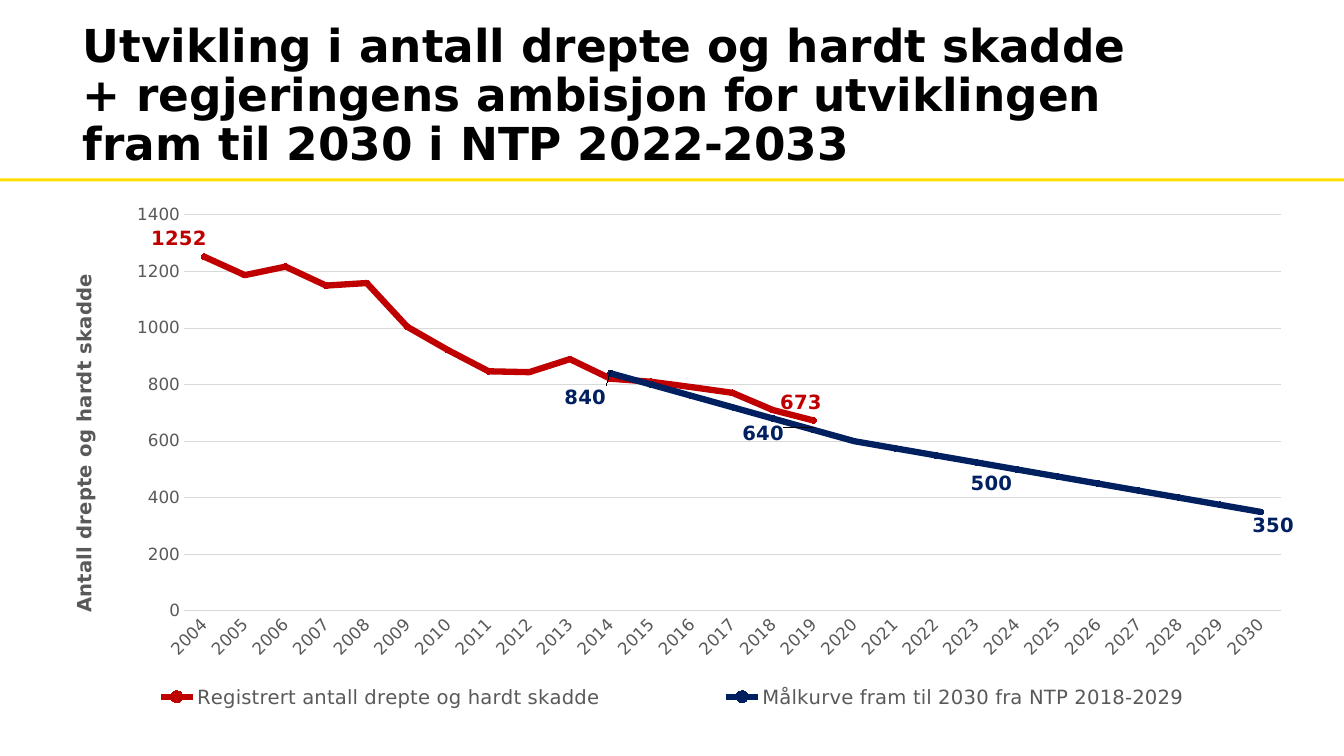
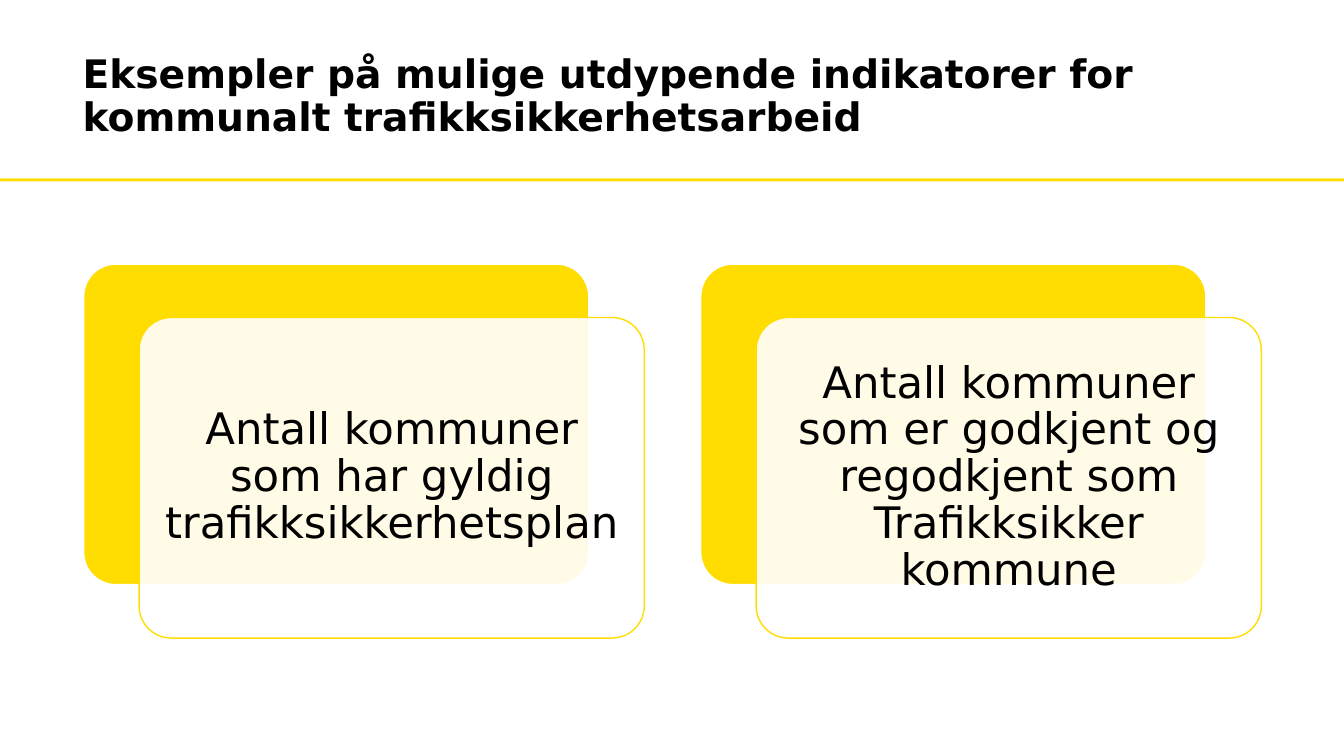
from dataclasses import dataclass

from lxml import etree
from pptx import Presentation
from pptx.chart.data import CategoryChartData
from pptx.dml.color import RGBColor
from pptx.enum.chart import (XL_CHART_TYPE, XL_LABEL_POSITION, XL_LEGEND_POSITION,
                             XL_MARKER_STYLE, XL_TICK_MARK)
from pptx.enum.shapes import MSO_SHAPE
from pptx.enum.text import MSO_ANCHOR, MSO_AUTO_SIZE, PP_ALIGN
from pptx.oxml.ns import qn
from pptx.util import Emu, Pt

LINE_CHART = XL_CHART_TYPE.LINE_MARKERS
LABEL_ABOVE = XL_LABEL_POSITION.ABOVE
LEGEND_BOTTOM = XL_LEGEND_POSITION.BOTTOM
CIRCLE = XL_MARKER_STYLE.CIRCLE
NO_TICK = XL_TICK_MARK.NONE
RECTANGLE = MSO_SHAPE.RECTANGLE
ROUNDED = MSO_SHAPE.ROUNDED_RECTANGLE
MIDDLE = MSO_ANCHOR.MIDDLE
NO_AUTOFIT = MSO_AUTO_SIZE.NONE
LEFT, CENTER = PP_ALIGN.LEFT, PP_ALIGN.CENTER

SLIDE_WIDTH, SLIDE_HEIGHT = 1333, 750
TITLE_LAYOUT = 5


@dataclass(frozen=True)
class Theme:
    font: str = "DejaVu Sans"
    black: str = "000000"
    white: str = "FFFFFF"
    yellow: str = "FFDD00"
    gray: str = "595959"
    grid: str = "D9D9D9"
    red: str = "C00000"
    navy: str = "002060"
    title_size: float = 28
    long_title_size: float = 32.4
    card_size: float = 31
    axis_size: float = 12
    label_size: float = 14
    line_spacing: float = 0.9


THEME = Theme()


def px(length):
    """One hundred px make an inch."""
    return Emu(length * 9144)


def rgb(color):
    return RGBColor.from_string(color)


def style_font(font, size, color, bold=False):
    font.name, font.size, font.bold = THEME.font, Pt(size), bold
    font.color.rgb = rgb(color)


def style_line(line, color, width):
    line.color.rgb = rgb(color)
    line.width = Pt(width)


def first(element, tag):
    return next(element.iter(qn(tag)))


def place(element, index, **values):
    """Give a chart part a manual layout, as fractions of the chart."""
    for old_layout in element.findall(qn("c:layout")):
        element.remove(old_layout)
    layout = etree.Element(qn("c:layout"))
    manual = etree.SubElement(layout, qn("c:manualLayout"))
    for name, value in values.items():
        etree.SubElement(manual, qn("c:" + name)).set("val", str(value))
    element.insert(index, layout)


class Deck:
    def __init__(self):
        self.presentation = Presentation()
        self.presentation.slide_width = px(SLIDE_WIDTH)
        self.presentation.slide_height = px(SLIDE_HEIGHT)
        self.slide = None

    def new_slide(self, title, size):
        layout = self.presentation.slide_layouts[TITLE_LAYOUT]
        self.slide = self.presentation.slides.add_slide(layout)
        self.box(RECTANGLE, 0, 177, SLIDE_WIDTH, 3, THEME.yellow)
        shape = self.slide.shapes.title
        shape.left, shape.top, shape.width, shape.height = map(px, (82, 36, 1050, 121))
        self.set_text(shape, title, size, LEFT, 0, bold=True)

    def set_text(self, shape, text, size, alignment, margin, bold=False):
        frame = shape.text_frame
        frame.text = text
        frame.word_wrap = True
        frame.auto_size = NO_AUTOFIT
        frame.vertical_anchor = MIDDLE
        frame.margin_left = frame.margin_right = px(margin)
        frame.margin_top = frame.margin_bottom = px(margin)
        paragraph = frame.paragraphs[0]
        paragraph.alignment = alignment
        paragraph.line_spacing = THEME.line_spacing
        style_font(paragraph.runs[0].font, size, THEME.black, bold)

    def box(self, kind, left, top, width, height, fill, line=None):
        shape = self.slide.shapes.add_shape(kind, *map(px, (left, top, width, height)))
        shape.shadow.inherit = False
        shape.fill.solid()
        shape.fill.fore_color.rgb = rgb(fill)
        if line:
            style_line(shape.line, line, 1)
        else:
            shape.line.fill.background()
        return shape

    def card(self, left, top, text):
        """A translucent card in front of a yellow one."""
        width, height = 501, 318
        back = self.box(ROUNDED, left, top, width, height, THEME.yellow, THEME.white)
        front = self.box(ROUNDED, left + 55, top + 53, width, height,
                         THEME.white, THEME.yellow)
        for shape in (back, front):
            shape.adjustments[0] = 0.1
        fill_color = first(front.element, "a:srgbClr")
        etree.SubElement(fill_color, qn("a:alpha")).set("val", "90000")
        self.set_text(front, text, THEME.card_size, CENTER, 13)

    def line_chart(self, left, top, width, height, categories, lines, axis_title):
        data = CategoryChartData()
        data.categories = categories
        for name, _, values, _ in lines:
            data.add_series(name, values)
        chart = self.slide.shapes.add_chart(
            LINE_CHART, *map(px, (left, top, width, height)), data).chart
        chart.has_title = False
        chart.font.name = THEME.font
        self.style_axes(chart, axis_title)

        # Lines, markers and chosen point labels
        offsets = []
        for series, (_, color, _, labels) in zip(chart.plots[0].series, lines):
            series.smooth = False
            style_line(series.format.line, color, 4.5)
            series.marker.style, series.marker.size = CIRCLE, 4
            series.marker.format.fill.solid()
            series.marker.format.fill.fore_color.rgb = rgb(color)
            series.marker.format.line.color.rgb = rgb(color)
            series.data_labels.show_value = False
            for point, offset in labels.items():
                label = series.points[point].data_label
                style_font(label.font, THEME.label_size, color, True)
                label.position = LABEL_ABOVE
                offsets.append(offset)
        for label, (x, y) in zip(chart.element.iter(qn("c:dLbl")), offsets):
            place(label, 1, x=x, y=y)

        # Legend and plot area
        chart.has_legend = True
        chart.legend.position = LEGEND_BOTTOM
        chart.legend.include_in_layout = False
        style_font(chart.legend.font, THEME.label_size, THEME.gray)
        place(first(chart.element, "c:legend"), 1, xMode="edge", yMode="edge",
              x=0, y=0.92, w=1, h=0.07)
        place(first(chart.element, "c:plotArea"), 0, layoutTarget="inner",
              xMode="edge", yMode="edge", x=0.113, y=0.046, w=0.869, h=0.747)

    def style_axes(self, chart, title):
        category, value = chart.category_axis, chart.value_axis
        for axis in (category, value):
            axis.major_tick_mark = axis.minor_tick_mark = NO_TICK
            style_font(axis.tick_labels.font, THEME.axis_size, THEME.gray)
        first(first(chart.element, "c:catAx"), "a:bodyPr").set("rot", "-2700000")
        style_line(category.format.line, THEME.grid, 0.75)
        value.format.line.fill.background()
        style_line(value.major_gridlines.format.line, THEME.grid, 0.75)
        value.minimum_scale, value.maximum_scale, value.major_unit = 0, 1400, 200
        frame = value.axis_title.text_frame
        frame.text = title
        style_font(frame.paragraphs[0].runs[0].font, THEME.label_size, THEME.gray, True)
        value_axis = first(chart.element, "c:valAx")
        first(value_axis, "a:bodyPr").set("rot", "-5400000")
        place(first(value_axis, "c:title"), 1,
              xMode="edge", yMode="edge", x=0.02, y=0.15)


def main():
    deck = Deck()

    # Development and target curve
    deck.new_slide("Utvikling i antall drepte og hardt skadde + regjeringens ambisjon "
                   "for utviklingen fram til 2030 i NTP 2022-2033", THEME.long_title_size)
    years = [str(year) for year in range(2004, 2031)]
    registered = [1252, 1187, 1217, 1150, 1159, 1004, 922, 847, 844, 890, 821,
                  810, 791, 771, 710, 673] + [None] * 11
    target = [None] * 10 + [*range(840, 600, -40), *range(600, 349, -25)]
    lines = [
        ("Registrert antall drepte og hardt skadde", THEME.red, registered,
         {0: (-0.02, 0), 15: (-0.01, 0)}),
        ("Målkurve fram til 2030 fra NTP 2018-2029", THEME.navy, target,
         {10: (-0.02, 0.08), 15: (-0.04, 0.04), 20: (-0.02, 0.06), 26: (0.01, 0.06)}),
    ]
    deck.line_chart(41, 189, 1252, 526, years, lines, "Antall drepte og hardt skadde")

    # Indicator cards
    deck.new_slide("Eksempler på mulige utdypende indikatorer for kommunalt "
                   "trafikksikkerhetsarbeid", THEME.title_size)
    indicators = ["Antall kommuner som har gyldig trafikksikkerhetsplan",
                  "Antall kommuner som er godkjent og regodkjent som Trafikksikker kommune"]
    for column, indicator in enumerate(indicators):
        deck.card(83 + 612 * column, 262, indicator)

    deck.presentation.save("out.pptx")


if __name__ == "__main__":
    main()
